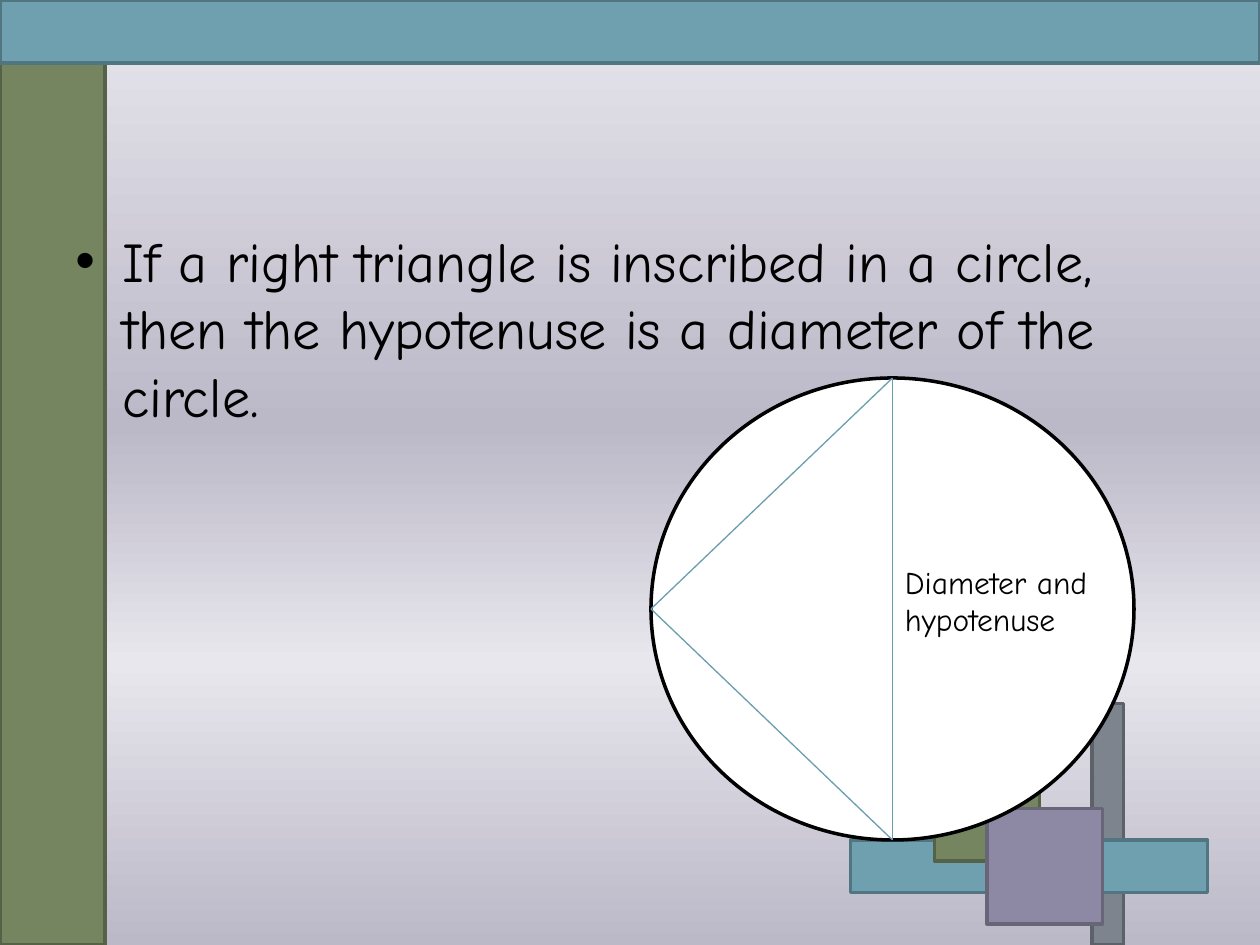
from lxml.etree import SubElement
from pptx import Presentation
from pptx.dml.color import RGBColor
from pptx.enum.shapes import MSO_CONNECTOR as Connector, MSO_SHAPE as Shape
from pptx.oxml.ns import qn
from pptx.util import Inches, Pt

CELL = Inches(1) / 12
COLUMNS, ROWS = 120, 90
FONT = "Comic Neue"

BLACK = RGBColor(0x00, 0x00, 0x00)
WHITE = RGBColor(0xFF, 0xFF, 0xFF)
TEAL = RGBColor(0x6E, 0xA0, 0xB0)
TEAL_EDGE = RGBColor(0x51, 0x76, 0x82)
OLIVE = RGBColor(0x74, 0x85, 0x60)
OLIVE_EDGE = RGBColor(0x56, 0x62, 0x47)
GRAY = RGBColor(0x7E, 0x84, 0x8D)
GRAY_EDGE = RGBColor(0x5D, 0x62, 0x68)
PURPLE = RGBColor(0x8D, 0x89, 0xA4)
PURPLE_EDGE = RGBColor(0x68, 0x65, 0x79)
CHORD = RGBColor(0x6A, 0x9D, 0xAE)
PALE = RGBColor(0xE8, 0xE7, 0xED)
DUSK = RGBColor(0xBB, 0xB8, 0xC8)


def cells(*counts):
    return [round(count * CELL) for count in counts]


def add_block(shapes, kind, box, fill, edge):
    block = shapes.add_shape(kind, *cells(*box))
    block.shadow.inherit = False
    block.fill.solid()
    block.fill.fore_color.rgb = fill
    block.line.color.rgb = edge
    block.line.width = Pt(2)


def add_text(slide, box, words, size):
    frame = slide.shapes.add_textbox(*cells(*box)).text_frame
    frame.word_wrap = True
    paragraph = frame.paragraphs[0]
    run = paragraph.add_run()
    run.text = words
    run.font.name = FONT
    run.font.size = Pt(size)
    run.font.color.rgb = BLACK
    return paragraph


def paint_background(slide):
    fill = slide.background.fill
    fill.gradient()
    fill.gradient_angle = 270
    stops = next(slide.element.iter(qn("a:gsLst")))
    for stop in list(stops):
        stops.remove(stop)
    for share, color in ((0, PALE), (45, DUSK), (70, PALE), (100, DUSK)):
        stop = SubElement(stops, qn("a:gs"), pos=str(share * 1000))
        SubElement(stop, qn("a:srgbClr"), val=str(color))


def add_corner_blocks(slide, box):
    left, top, width, height = box
    group = slide.shapes.add_group_shape()
    for x, y, w, h, fill, edge in (
        (23, 0, 3, height, GRAY, GRAY_EDGE),
        (0, 13, width, 5, TEAL, TEAL_EDGE),
        (8, 1, 10, 14, OLIVE, OLIVE_EDGE),
        (13, 10, 11, 11, PURPLE, PURPLE_EDGE),
    ):
        add_block(group.shapes, Shape.RECTANGLE, (left + x, top + y, w, h), fill, edge)


def add_frame_bars(slide, box):
    left, top, width, height = box
    add_block(slide.shapes, Shape.RECTANGLE, (left, top, 10, height), OLIVE, OLIVE_EDGE)
    add_block(slide.shapes, Shape.RECTANGLE, (left, top, width, 6), TEAL, TEAL_EDGE)


def add_theorem(slide, box):
    theorem = add_text(
        slide,
        box,
        "If a right triangle is inscribed in a circle, "
        "then the hypotenuse is a diameter of the circle.",
        32,
    )
    theorem.space_before = Pt(6.4)
    properties = theorem._p.get_or_add_pPr()
    indent = Inches(0.375)
    properties.set("marL", str(indent))
    properties.set("indent", str(-indent))
    SubElement(properties, qn("a:buFont"), typeface="Arial")
    SubElement(properties, qn("a:buChar"), char="•")


def add_inscribed_triangle(slide, box):
    left, top, width, height = box
    add_block(slide.shapes, Shape.OVAL, box, WHITE, BLACK)
    center = left + width / 2
    apex, foot = (center, top), (center, top + height)
    right_angle = (left, top + height / 2)
    corners = (apex, foot, right_angle)
    for start, end in zip(corners, corners[1:] + corners[:1]):
        side = slide.shapes.add_connector(Connector.STRAIGHT, *cells(*start, *end))
        side.line.color.rgb = CHORD
        side.line.width = Pt(0.75)
        SubElement(side._element.spPr, qn("a:effectLst"))
    add_text(slide, (center, top + 17, 33, 8.5), "Diameter and hypotenuse", 18)


def main():
    deck = Presentation()
    deck.slide_width, deck.slide_height = cells(COLUMNS, ROWS)
    slide = deck.slides.add_slide(deck.slide_layouts[6])
    paint_background(slide)
    add_corner_blocks(slide, (81, 67, 34, 23))
    add_frame_bars(slide, (0, 0, COLUMNS, ROWS))
    add_theorem(slide, (6, 21, 108, 59.4))
    add_inscribed_triangle(slide, (62, 36, 46, 44))
    deck.save("out.pptx")


if __name__ == "__main__":
    main()
